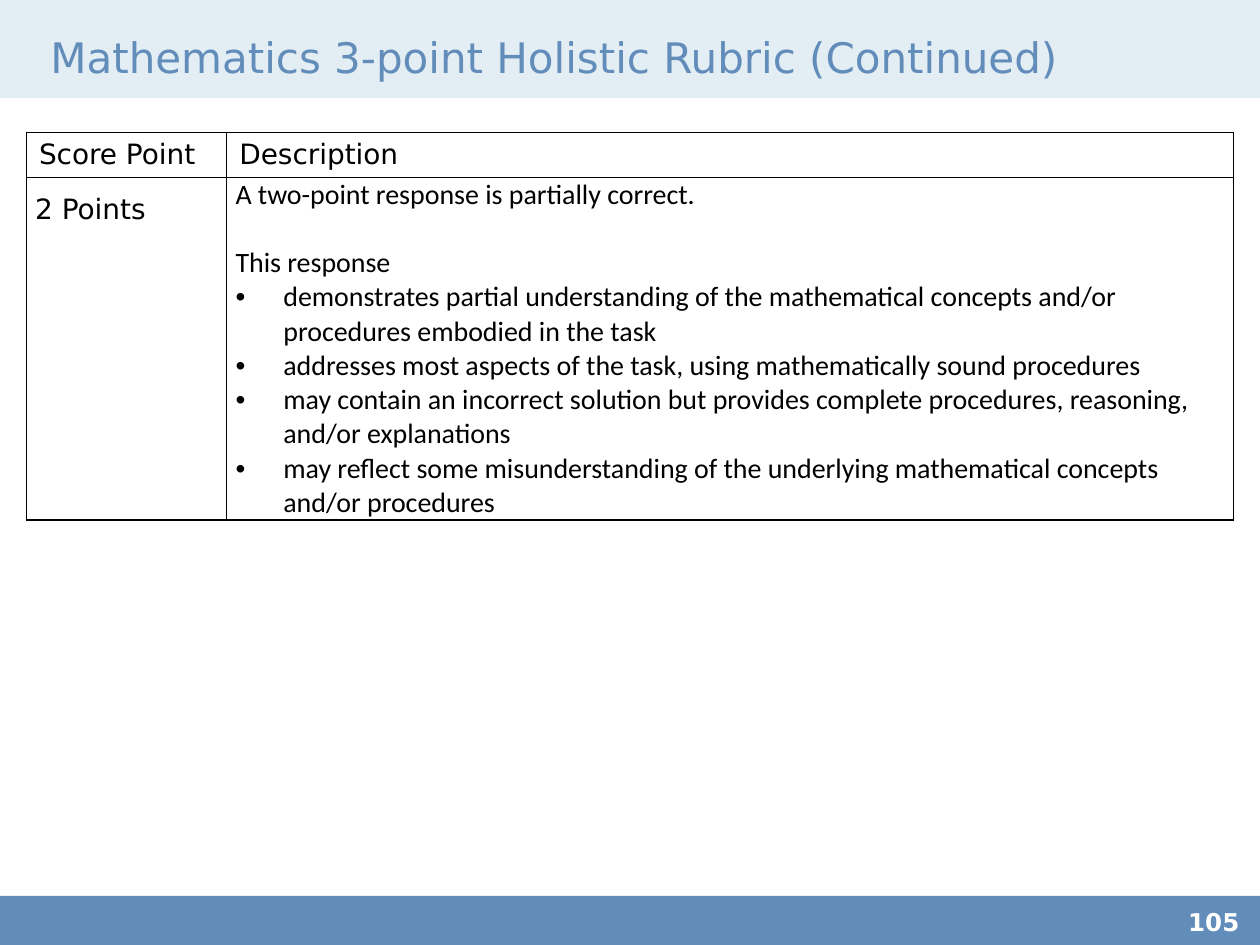
import pptx
import pptx.dml.color
import pptx.enum.shapes
import pptx.enum.text
import pptx.oxml
import pptx.oxml.ns
import pptx.util
from pptx.util import Inches

COLORS = {"blue": "628DBB", "pale": "E3EDF4", "white": "FFFFFF", "black": "000000"}
HEADING_FONT, BODY_FONT = "DejaVu Sans", "Calibri"
INTRO = ["A two-point response is partially correct.", "This response"]
CRITERIA = [
    "demonstrates partial understanding of the mathematical concepts and/or procedures embodied in the task",
    "addresses most aspects of the task, using mathematically sound procedures",
    "may contain an incorrect solution but provides complete procedures, reasoning, and/or explanations",
    "may reflect some misunderstanding of the underlying mathematical concepts and/or procedures",
]


def rgb(name):
    """Return the named colour."""
    return pptx.dml.color.RGBColor.from_string(COLORS[name])


def xml(tag, attrs="", inner=""):
    """Return a DrawingML element."""
    ns = pptx.oxml.ns.nsdecls("a")
    return pptx.oxml.parse_xml(f"<a:{tag} {ns} {attrs}>{inner}</a:{tag}>")


class RubricSlide:
    """Holds the style and the current slide."""

    def __init__(self, prs):
        """Add a title-only slide."""
        self.s = prs.slides.add_slide(prs.slide_layouts[5])

    def format(self, p, size, color="black", font=HEADING_FONT, bold=False):
        """Format the runs of a paragraph."""
        p.alignment = pptx.enum.text.PP_ALIGN.LEFT
        for r in p.runs:
            r.font.size = pptx.util.Pt(size)
            r.font.name = font
            r.font.bold = bold
            r.font.color.rgb = rgb(color)

    def inset(self, box, left, top, right, bottom):
        """Set the margins of a text frame or cell."""
        box.margin_left, box.margin_top = Inches(left), Inches(top)
        box.margin_right, box.margin_bottom = Inches(right), Inches(bottom)

    def bar(self, x, y, w, h, color):
        """Add a plain rectangle."""
        shape = pptx.enum.shapes.MSO_SHAPE.RECTANGLE
        sp = self.s.shapes.add_shape(shape, Inches(x), Inches(y), Inches(w), Inches(h))
        sp.shadow.inherit = False
        sp.fill.solid()
        sp.fill.fore_color.rgb = rgb(color)
        sp.line.fill.background()

    def title(self, text, x, y, w, h):
        """Fill the title placeholder and bring it in front of the bars."""
        sp = self.s.shapes.title
        sp.left, sp.top, sp.width, sp.height = Inches(x), Inches(y), Inches(w), Inches(h)
        sp.element.getparent().append(sp.element)
        tf = sp.text_frame
        tf.text = text
        tf.auto_size = pptx.enum.text.MSO_AUTO_SIZE.NONE
        tf.vertical_anchor = pptx.enum.text.MSO_ANCHOR.MIDDLE
        self.inset(tf, 0, 0, 0.1, 0.05)
        self.format(tf.paragraphs[0], 24, "blue")

    def page_number(self, text, x, y, w, h):
        """Add the page number."""
        sp = self.s.shapes.add_textbox(Inches(x), Inches(y), Inches(w), Inches(h))
        tf = sp.text_frame
        tf.word_wrap = True
        tf.text = text
        self.inset(tf, 0, 0, 0, 0)
        self.format(tf.paragraphs[0], 14, "white", bold=True)

    def table(self, x, y, cols, rows):
        """Add an unfilled table with thin black borders."""
        frame = self.s.shapes.add_table(len(rows), len(cols), Inches(x), Inches(y),
                                        Inches(sum(cols)), Inches(sum(rows)))
        table = frame.table
        table.first_row = table.horz_banding = False
        for col, width in zip(table.columns, cols):
            col.width = Inches(width)
        for row, height in zip(table.rows, rows):
            row.height = Inches(height)
        line = f'<a:solidFill><a:srgbClr val="{COLORS["black"]}"/></a:solidFill>'
        for cell in table.iter_cells():
            tc_pr = cell._tc.get_or_add_tcPr()
            for side in "LRTB":
                tc_pr.append(xml(f"ln{side}", 'w="12700"', line))
            cell.fill.background()
        return table

    def header(self, cell, text):
        """Fill a header cell."""
        cell.text = text
        cell.vertical_anchor = pptx.enum.text.MSO_ANCHOR.BOTTOM
        self.inset(cell, 0.1, 0.05, 0.1, 0.05)
        self.format(cell.text_frame.paragraphs[0], 16)

    def score(self, cell, text):
        """Fill a score cell."""
        cell.text = text
        self.inset(cell, 0.07, 0, 0.07, 0)
        p = cell.text_frame.paragraphs[0]
        p.line_spacing = 1.5
        self.format(p, 16)

    def description(self, cell, intro, criteria):
        """Fill a description cell with an introduction and bullets."""
        cell.text = "\n".join(intro + criteria)
        self.inset(cell, 0.07, 0, 0.07, 0)
        paragraphs = cell.text_frame.paragraphs
        paragraphs[0].space_after = pptx.util.Pt(19.5)
        for p in paragraphs[len(intro):]:
            p_pr = p._p.get_or_add_pPr()
            p_pr.set("marL", str(Inches(0.38)))
            p_pr.set("indent", str(Inches(-0.38)))
            p_pr.append(xml("buFont", 'typeface="Arial"'))
            p_pr.append(xml("buChar", 'char="•"'))
            p_pr.append(xml("tabLst", inner=f'<a:tab pos="{Inches(0.5)}" algn="l"/>'))
        for p in paragraphs:
            self.format(p, 16, font=BODY_FONT)


def main():
    """Build the rubric slide."""
    prs = pptx.Presentation()
    prs.slide_width, prs.slide_height = Inches(10), Inches(7.5)
    slide = RubricSlide(prs)
    slide.bar(0, 7.11, 10, 0.39, "blue")
    slide.bar(0, 0, 10, 1.31, "pale")
    slide.bar(0, 0.78, 10, 0.86, "white")
    slide.title("Mathematics 3-point Holistic Rubric (Continued)", 0.4, 0.23, 9, 0.49)
    table = slide.table(0.21, 1.05, [1.59, 7.99], [0.36, 2.71])
    for col, text in enumerate(["Score Point", "Description"]):
        slide.header(table.cell(0, col), text)
    slide.score(table.cell(1, 0), "2 Points")
    slide.description(table.cell(1, 1), INTRO, CRITERIA)
    slide.page_number("105", 9.43, 7.2, 0.57, 0.3)
    prs.save("out.pptx")


if __name__ == "__main__":
    main()
